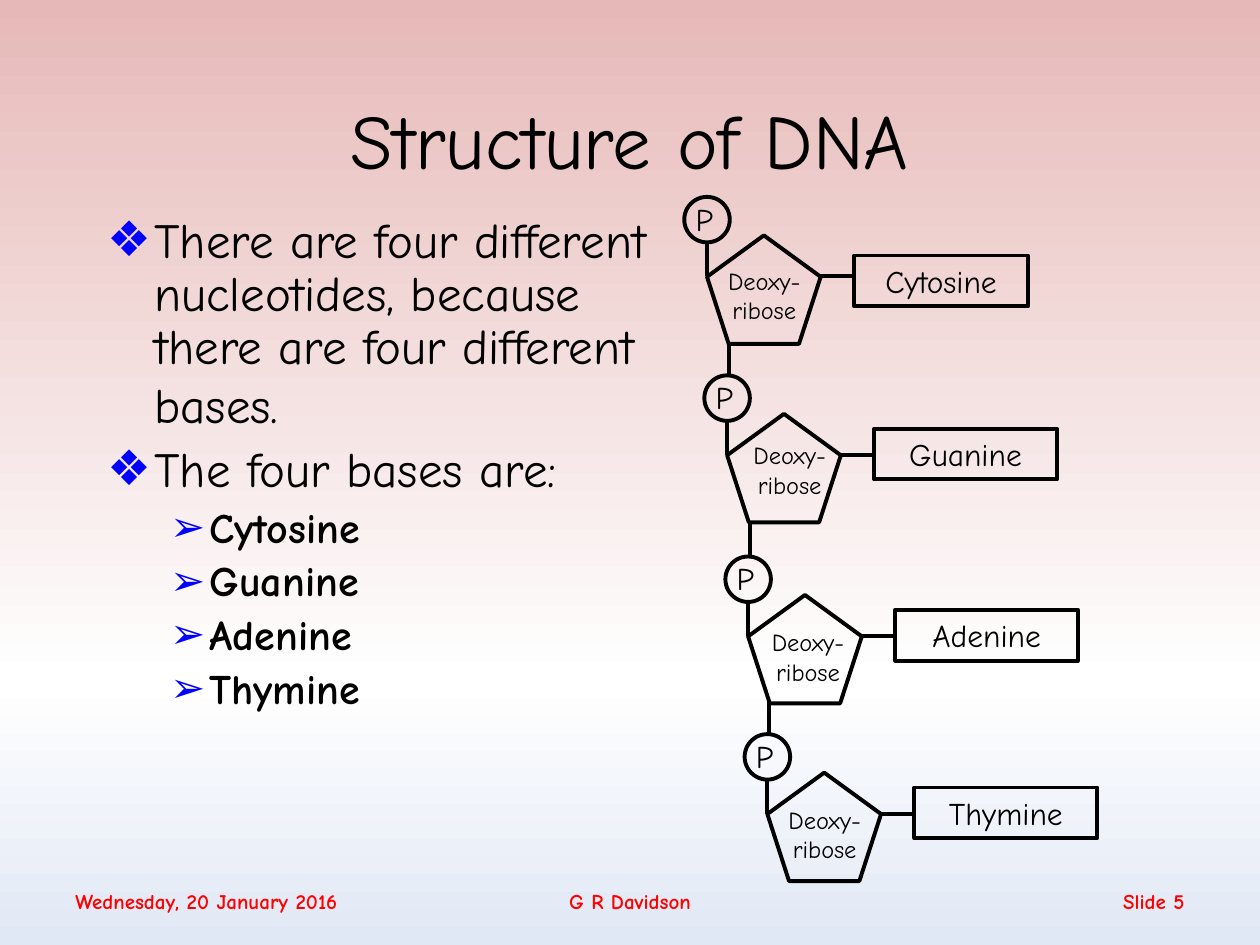
from copy import deepcopy

from pptx import Presentation
from pptx.dml import color
from pptx.enum import shapes, text
from pptx.oxml import ns, xmlchemy
from pptx.util import Pt

FONT = "Comic Neue"
BLACK, RED, BLUE = "000000", "FF0000", "0000FF"
ALIGN = text.PP_ALIGN
SHAPE = shapes.MSO_SHAPE

# base, sugar left and top, sugar label offset, base box top offset and width
NUCLEOTIDES = [
    ("Cytosine", 404, 134.5, (-5, 14), 11.5, 99.5),
    ("Guanine", 415.5, 236.5, (-2, 11.5), 8.5, 104.5),
    ("Adenine", 427.5, 340, (-3.5, 15), 8.5, 104.5),
    ("Thymine", 438.5, 441.5, (-5, 15), 8.5, 104.5),
]
SUGAR_WIDTH, SUGAR_HEIGHT = 65, 62
SHOULDER = 23.5  # height of the sugar's side corners below its top
CIRCLE = 26
LINK = 19


def rgb(value):
    return color.RGBColor.from_string(value)


def add_span(para, wording, size, bold=False, ink=BLACK):
    span = para.add_run()
    span.text = wording
    span.font.name = FONT
    span.font.size = Pt(size)
    span.font.bold = bold
    span.font.color.rgb = rgb(ink)


def place(item, left, top, width, height):
    item.left, item.top, item.width, item.height = map(Pt, (left, top, width, height))


def add_label(parent, wording, box, size, align=ALIGN.CENTER,
              anchor=text.MSO_ANCHOR.TOP, bold=False, ink=BLACK):
    label = parent.add_textbox(*map(Pt, box))
    frame = label.text_frame
    frame.word_wrap = True
    frame.vertical_anchor = anchor
    para = frame.paragraphs[0]
    para.alignment = align
    add_span(para, wording, size, bold, ink)


def add_outline(parent, kind, box):
    shape = parent.add_shape(kind, *map(Pt, box))
    shape.shadow.inherit = False
    shape.fill.background()
    shape.line.color.rgb = rgb(BLACK)
    shape.line.width = Pt(2.25)
    return shape


def add_bond(parent, *ends):
    bond = parent.add_connector(shapes.MSO_CONNECTOR.STRAIGHT, *map(Pt, ends))
    bond.line.color.rgb = rgb(BLACK)
    bond.line.width = Pt(2.25)
    bond._element.spPr.append(xmlchemy.OxmlElement("a:effectLst"))


def paint_background(page, angle, stops):
    fill = page.background.fill
    fill.gradient()
    fill.gradient_angle = angle
    stop_list = page._element.find(".//" + ns.qn("a:gsLst"))
    while len(stop_list) < len(stops):
        stop_list.append(deepcopy(stop_list[0]))
    for stop, (position, value) in zip(fill.gradient_stops, stops):
        stop.position = position
        stop.color.rgb = rgb(value)


def set_bullet(para, symbol, margin, hang):
    properties = para._p.get_or_add_pPr()
    properties.set("marL", str(Pt(margin)))
    properties.set("indent", str(-Pt(hang)))
    tint = xmlchemy.OxmlElement("a:buClr")
    value = xmlchemy.OxmlElement("a:srgbClr")
    value.set("val", BLUE)
    tint.append(value)
    bullet = xmlchemy.OxmlElement("a:buChar")
    bullet.set("char", symbol)
    properties.extend([tint, bullet])


def fill_title(title, box):
    place(title, *box)
    title.text_frame.vertical_anchor = text.MSO_ANCHOR.MIDDLE
    para = title.text_frame.paragraphs[0]
    para.alignment = ALIGN.CENTER
    add_span(para, "Structure of DNA", 44)


def fill_body(body, box):
    place(body, *box)
    frame = body.text_frame
    frame.auto_size = text.MSO_AUTO_SIZE.NONE
    points = [
        (0, "There are four different nucleotides, because there are four different bases.", 32),
        (0, "The four bases are:", None),
    ] + [(1, base, None) for base, *_ in NUCLEOTIDES]
    for index, (level, wording, end_size) in enumerate(points):
        para = frame.add_paragraph() if index else frame.paragraphs[0]
        para.level = level
        para.line_spacing = 0.9
        if level:
            set_bullet(para, "➢", 58.5, 22.5)
            add_span(para, wording, 24, bold=True)
        else:
            set_bullet(para, "❖", 27, 27)
            add_span(para, wording, 28)
        if end_size:
            add_span(para, " ", end_size)


def add_nucleotide(page, base, left, top, label_offset, base_offset, base_width, linked):
    """Place phosphate, sugar and base around the sugar's top left corner."""
    parts = page.shapes.add_group_shape().shapes
    shoulder = top + SHOULDER
    circle_top = top - 22
    right = left + SUGAR_WIDTH
    add_outline(parts, SHAPE.REGULAR_PENTAGON, (left, top, SUGAR_WIDTH, SUGAR_HEIGHT))
    add_bond(parts, left, shoulder, left, shoulder - LINK)
    add_outline(parts, SHAPE.OVAL, (left - CIRCLE / 2, circle_top, CIRCLE, CIRCLE))
    add_bond(parts, right + LINK, shoulder, right, shoulder)
    if linked:
        add_bond(parts, left + 1, circle_top, left + 1, circle_top - LINK)

    base_box = add_outline(parts, SHAPE.RECTANGLE,
                           (right + LINK, top + base_offset, base_width, 29))
    base_box.text_frame.vertical_anchor = text.MSO_ANCHOR.TOP
    para = base_box.text_frame.paragraphs[0]
    para.alignment = ALIGN.CENTER
    add_span(para, base, 18)

    add_label(parts, "P", (left - 23, top - 24, 43, 29), 18)
    across, down = label_offset
    add_label(parts, "Deoxy-ribose", (left + across, top + down, 75.5, 41), 14)


def add_footer(page, top, height):
    entries = [
        ("Wednesday, 20 January 2016", 36, 239, ALIGN.LEFT),
        ("G R Davidson", 246, 228, ALIGN.CENTER),
        ("Slide 5", 516, 168, ALIGN.RIGHT),
    ]
    for wording, left, width, align in entries:
        add_label(page.shapes, wording, (left, top, width, height), 12, align,
                  text.MSO_ANCHOR.MIDDLE, bold=True, ink=RED)


def main():
    deck = Presentation()
    deck.slide_width, deck.slide_height = Pt(720), Pt(540)
    page = deck.slides.add_slide(deck.slide_layouts[1])
    paint_background(page, 270, [(0, "E6B9B8"), (0.72, "FFFFFF"), (1, "E1E8F5")])
    add_footer(page, 500.5, 29)
    fill_title(page.shapes.title, (54, 34, 612, 90))
    fill_body(page.placeholders[1], (54, 120, 340, 324))
    for index, nucleotide in enumerate(NUCLEOTIDES):
        add_nucleotide(page, *nucleotide, linked=index > 0)
    deck.save("out.pptx")


if __name__ == "__main__":
    main()
